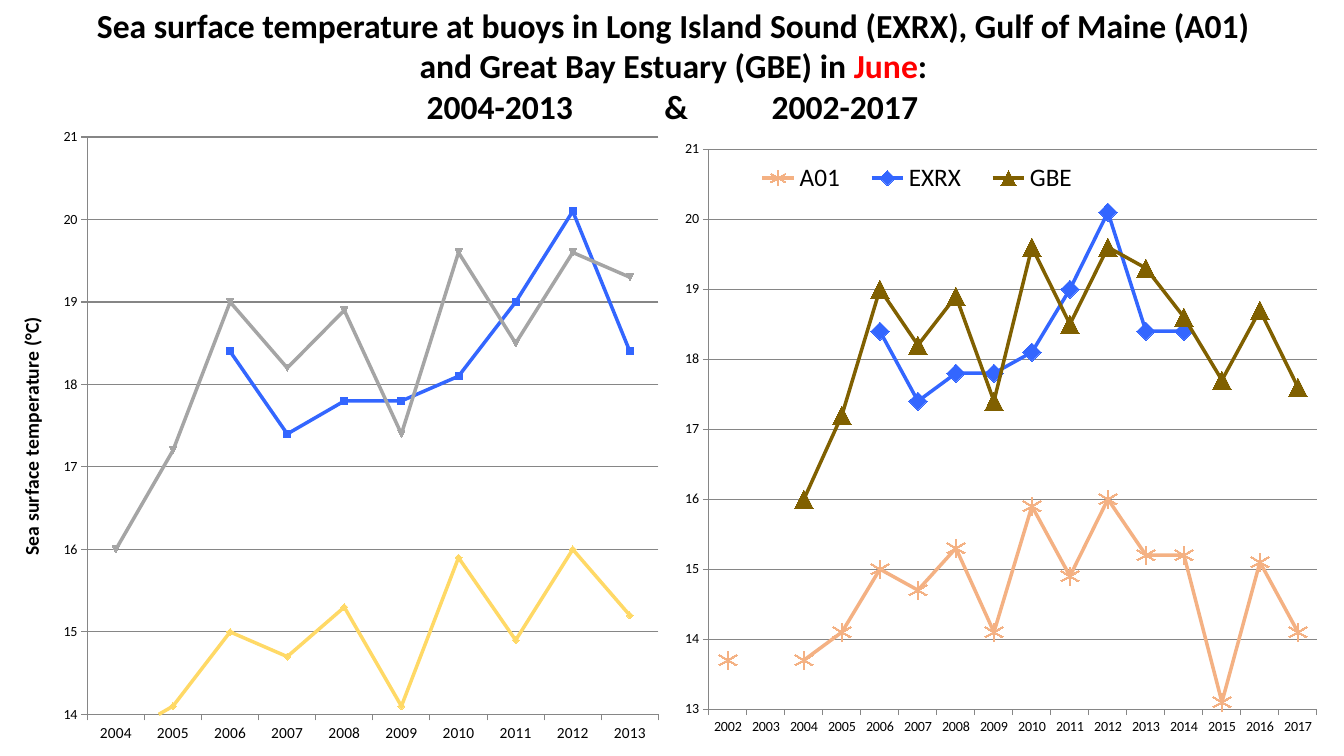
"""Build a slide that compares June sea surface temperatures at three buoys."""
from lxml.etree import SubElement
from pptx import Presentation
from pptx.chart.data import CategoryChartData
from pptx.dml.color import RGBColor
from pptx.enum.chart import XL_CHART_TYPE, XL_LEGEND_POSITION, XL_MARKER_STYLE, XL_TICK_MARK
from pptx.enum.text import MSO_ANCHOR, MSO_AUTO_SIZE, PP_ALIGN
from pptx.oxml.ns import qn
from pptx.util import Pt


def style_text(text, para, size=24, color="000000", bold=True):
    span = para.add_run()
    span.text = text
    span.font.name = "Calibri"
    span.font.size = Pt(size)
    span.font.bold = bold
    span.font.color.rgb = RGBColor.from_string(color)


def place_part(part, index, values, inner=False):
    for old in part.findall(qn("c:layout")):
        part.remove(old)
    layout = SubElement(part, qn("c:layout"))
    part.insert(index, layout)
    manual = SubElement(layout, qn("c:manualLayout"))
    if inner:
        SubElement(manual, qn("c:layoutTarget")).set("val", "inner")
    for name in ("xMode", "yMode"):
        SubElement(manual, qn(f"c:{name}")).set("val", "edge")
    for name, value in zip("xywh", values):
        SubElement(manual, qn(f"c:{name}")).set("val", str(value))


exrx = [18.4, 17.4, 17.8, 17.8, 18.1, 19, 20.1, 18.4]
a01 = [13.7, 14.1, 15, 14.7, 15.3, 14.1, 15.9, 14.9, 16, 15.2]
gbe = [16, 17.2, 19, 18.2, 18.9, 17.4, 19.6, 18.5, 19.6, 19.3]
automatic = XL_MARKER_STYLE.AUTOMATIC

panels = [
    dict(years=range(2004, 2014), frame=(0, 84.25, 480, 455.75), minimum=14,
         plot=(0.13, 0.03, 0.85, 0.905), year_size=11, marker_size=5,
         axis_title="Sea surface temperature (°C)", legend=None,
         series=[("Series 1", [None] * 2 + exrx, "3366FF", automatic),
                 ("Series 2", a01, "FFD966", automatic),
                 ("Series 3", gbe, "A5A5A5", automatic)]),
    dict(years=range(2002, 2018), frame=(480, 93.6, 480, 433.4), minimum=13,
         plot=(0.055, 0.03, 0.905, 0.923), year_size=10, marker_size=13,
         axis_title=None, legend=(0.1, 0.04, 0.53, 0.075),
         series=[("A01", [13.7, None] + a01 + [15.2, 13.1, 15.1, 14.1], "F4B183",
                  XL_MARKER_STYLE.STAR),
                 ("EXRX", [None] * 4 + exrx + [18.4] + [None] * 3, "3366FF",
                  XL_MARKER_STYLE.DIAMOND),
                 ("GBE", [None] * 2 + gbe + [18.6, 17.7, 18.7, 17.6], "806000",
                  XL_MARKER_STYLE.TRIANGLE)]),
]

deck = Presentation()
deck.slide_width, deck.slide_height = Pt(960), Pt(540)
page = deck.slides.add_slide(deck.slide_layouts[5])

for panel in panels:
    data = CategoryChartData()
    data.categories = [str(year) for year in panel["years"]]
    for name, values, color, symbol in panel["series"]:
        data.add_series(name, values)
    frame = page.shapes.add_chart(
        XL_CHART_TYPE.LINE_MARKERS, *[Pt(length) for length in panel["frame"]], data)
    chart = frame.chart
    chart.has_title = False
    chart.font.name = "Calibri"
    chart.font.size = Pt(10)
    chart.font.color.rgb = RGBColor.from_string("000000")
    place_part(chart.plots[0].categories[0] and chart.element.find(".//" + qn("c:plotArea")),
               0, panel["plot"], inner=True)

    for axis in (chart.category_axis, chart.value_axis):
        axis.major_tick_mark = XL_TICK_MARK.OUTSIDE
        axis.minor_tick_mark = XL_TICK_MARK.NONE
        axis.format.line.color.rgb = RGBColor.from_string("868686")
        axis.format.line.width = Pt(0.75)
    chart.category_axis.tick_labels.font.size = Pt(panel["year_size"])
    scale = chart.value_axis
    scale.minimum_scale, scale.maximum_scale, scale.major_unit = panel["minimum"], 21, 1
    scale.tick_labels.number_format = "0"
    scale.tick_labels.number_format_is_linked = False
    scale.major_gridlines.format.line.color.rgb = RGBColor.from_string("868686")
    scale.major_gridlines.format.line.width = Pt(0.75)
    if panel["axis_title"]:
        style_text(panel["axis_title"], scale.axis_title.text_frame.paragraphs[0], size=14)

    chart.has_legend = panel["legend"] is not None
    if chart.has_legend:
        chart.legend.position = XL_LEGEND_POSITION.TOP
        chart.legend.include_in_layout = False
        chart.legend.font.size = Pt(18)
        place_part(chart.element.find(".//" + qn("c:legend")), 1, panel["legend"])

    for line, (name, values, color, symbol) in zip(chart.plots[0].series, panel["series"]):
        line.smooth = False
        line.format.line.color.rgb = RGBColor.from_string(color)
        line.format.line.width = Pt(2.5)
        line.marker.style = symbol
        line.marker.size = panel["marker_size"]
        line.marker.format.fill.solid()
        line.marker.format.fill.fore_color.rgb = RGBColor.from_string(color)
        line.marker.format.line.color.rgb = RGBColor.from_string(color)

title = page.shapes.title
title.left, title.top, title.width, title.height = Pt(1.5), Pt(0), Pt(959), Pt(116.5)
frame.element.addprevious(title.element)
box = title.text_frame
box.word_wrap = True
box.auto_size = MSO_AUTO_SIZE.NONE
box.vertical_anchor = MSO_ANCHOR.TOP
box.margin_left = box.margin_right = Pt(0)

heading = [
    [("Sea surface temperature at buoys in Long Island Sound (EXRX), Gulf of Maine (A01)", "000000")],
    [("and Great Bay Estuary (GBE) in ", "000000"), ("June", "FF0000"), (":", "000000")],
    [("\t2004-2013\t&\t2002-2017", "000000")],
]
for number, spans in enumerate(heading):
    para = box.paragraphs[0] if number == 0 else box.add_paragraph()
    para.alignment = PP_ALIGN.CENTER
    for text, color in spans:
        style_text(text, para, color=color)

para.alignment = PP_ALIGN.LEFT
stops = SubElement(para._p.get_or_add_pPr(), qn("a:tabLst"))
for center in (355.5, 481.5, 602):
    stop = SubElement(stops, qn("a:tab"))
    stop.set("pos", str(Pt(center)))
    stop.set("algn", "ctr")

deck.save("out.pptx")
